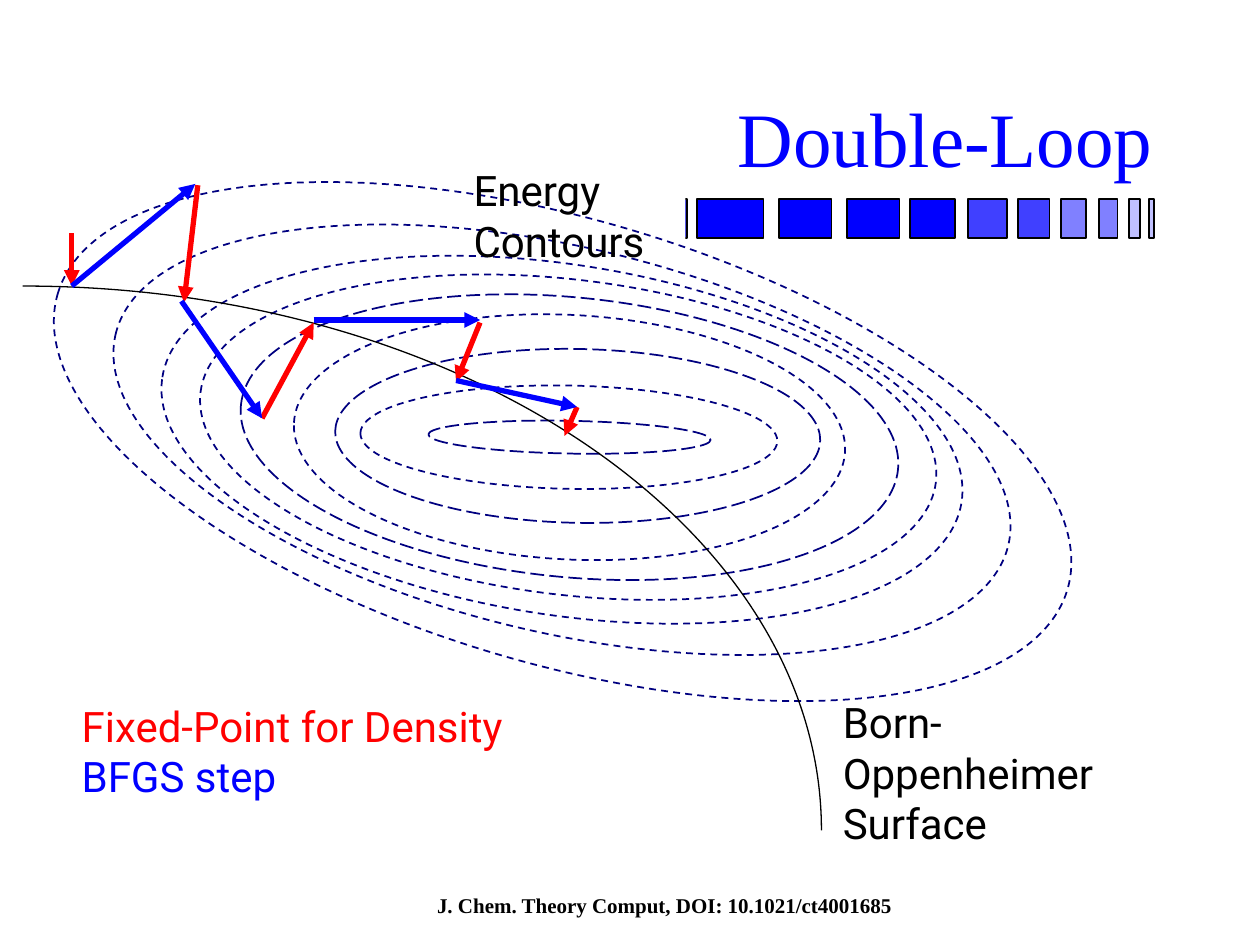
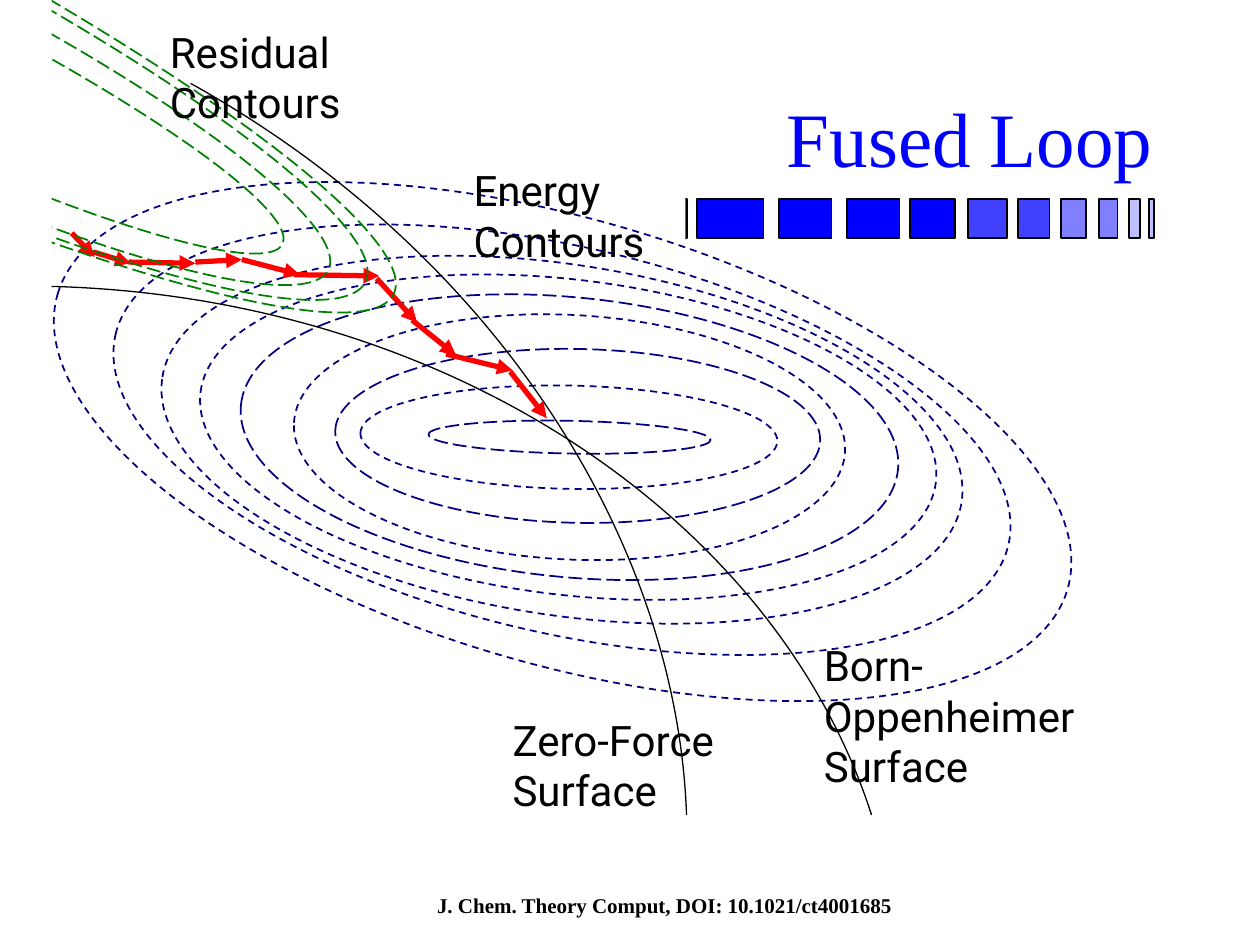
from lxml.etree import SubElement
from pptx import Presentation
from pptx.dml.color import RGBColor
from pptx.enum.dml import MSO_LINE
from pptx.enum.shapes import MSO_CONNECTOR, MSO_SHAPE
from pptx.enum.text import MSO_ANCHOR, MSO_AUTO_SIZE, PP_ALIGN
from pptx.oxml.ns import qn
from pptx.util import Inches, Pt

COLORS = {
    "black": "000000",
    "white": "FFFFFF",
    "blue": "0000FF",
    "blue_dark": "0000E0",
    "blue_mid": "4040FF",
    "blue_light": "8080FF",
    "blue_pale": "C0C0FF",
    "navy": "000080",
    "green": "008000",
    "red": "FF0000",
}
SERIF, SANS = "Times New Roman", "Roboto"
CITATION = "J. Chem. Theory Comput, DOI: 10.1021/ct4001685"
ARC_HANDLE = 0.5523  # Bezier handle of a quarter ellipse, as a share of its radius

# Fading band under the title: left, width, colour
BAND_TOP, BAND_HEIGHT = 1.58, 0.31
BAND_TILES = [
    (9.12, 0.04, "blue_pale"), (8.96, 0.09, "blue_pale"),
    (8.72, 0.15, "blue_light"), (8.42, 0.2, "blue_light"),
    (8.08, 0.25, "blue_mid"), (7.68, 0.31, "blue_mid"),
    (6.18, 0.42, "blue"), (7.22, 0.36, "blue"), (6.72, 0.42, "blue"),
    (5.53, 0.53, "blue"), (4.86, 0.59, "blue_dark"), (0.01, 4.77, "blue_dark"),
]

# Contours: left, top, width, height, rotation, dash
SHORT, LONG = MSO_LINE.DASH, MSO_LINE.LONG_DASH
ENERGY_CONTOURS = [
    (0.82, 1.96, 7.28, 3.06, 13.3, SHORT),
    (2.86, 3.06, 3.31, 0.82, 1.1, SHORT),
    (3.4, 3.34, 2.24, 0.26, 1.1, LONG),
    (2.66, 2.77, 3.85, 1.38, 1.1, LONG),
    (2.33, 2.5, 4.38, 1.94, 3, SHORT),
    (1.9, 2.36, 5.24, 2.22, 5.6, LONG),
    (1.57, 2.22, 5.88, 2.5, 7, SHORT),
    (1.25, 2.1, 6.42, 2.78, 8.9, SHORT),
    (0.29, 1.74, 8.35, 3.53, 16.3, SHORT),
]
RESIDUAL_CONTOURS = [
    (-4.85, -0.26, 7.47, 1.12, 26, LONG),
    (-5.52, -0.5, 8.56, 1.53, 26, LONG),
    (-7.03, -0.97, 10.46, 1.83, 26, LONG),
    (-8.61, -1.38, 12.36, 2.01, 26, LONG),
]

# Steps: x and y of the start, x and y of the end
DENSITY_STEPS = [
    (0.57, 1.85, 0.57, 2.27), (1.57, 1.47, 1.46, 2.4), (2.08, 3.32, 2.49, 2.56),
    (3.81, 2.56, 3.62, 3.03), (4.58, 3.23, 4.48, 3.46),
]
BFGS_STEPS = [
    (0.57, 2.27, 1.55, 1.46), (1.44, 2.39, 2.08, 3.32),
    (2.49, 2.54, 3.81, 2.54), (3.62, 3.02, 4.58, 3.23),
]
FUSED_STEPS = [
    (0.57, 1.85, 0.75, 2.04), (0.74, 2, 1.04, 2.09), (1.02, 2.08, 1.55, 2.09),
    (1.55, 2.08, 1.92, 2.06), (1.92, 2.06, 2.38, 2.18), (2.33, 2.18, 3.01, 2.19),
    (2.99, 2.21, 3.31, 2.56), (3.27, 2.54, 3.62, 2.82), (3.54, 2.81, 4.07, 2.94),
    (4.05, 2.95, 4.34, 3.32),
]


def rgb(name):
    return RGBColor.from_string(COLORS[name])


def set_line(shape, color, width):
    shape.line.color.rgb = rgb(color)
    shape.line.width = Pt(width)


def add_block(shapes, x, y, w, h, fill, outline=None):
    sp = shapes.add_shape(MSO_SHAPE.RECTANGLE, Inches(x), Inches(y), Inches(w), Inches(h))
    sp.shadow.inherit = False
    sp.fill.solid()
    sp.fill.fore_color.rgb = rgb(fill)
    if outline:
        set_line(sp, outline, 1)
    else:
        sp.line.fill.background()
    return sp


def add_steps(s, steps, color):
    for x1, y1, x2, y2 in steps:
        cx = s.shapes.add_connector(
            MSO_CONNECTOR.STRAIGHT, Inches(x1), Inches(y1), Inches(x2), Inches(y2))
        set_line(cx, color, 3)
        sp_pr = cx.element.find(qn("p:spPr"))
        SubElement(sp_pr.find(qn("a:ln")), qn("a:tailEnd"), type="triangle")
        SubElement(sp_pr, qn("a:effectLst"))


def add_contours(s, contours, color):
    for x, y, w, h, angle, dash in contours:
        sp = s.shapes.add_shape(MSO_SHAPE.OVAL, Inches(x), Inches(y), Inches(w), Inches(h))
        sp.shadow.inherit = False
        sp.rotation = angle
        sp.fill.background()
        set_line(sp, color, 1)
        sp.line.dash_style = dash


def add_surface(s, x, y, w, h, angle=0):
    """Quarter ellipse from the top left to the bottom right of its box."""
    builder = s.shapes.build_freeform(Inches(x), Inches(y))
    builder.add_line_segments([
        (Inches(x + w * ARC_HANDLE), Inches(y)),
        (Inches(x + w), Inches(y + h * (1 - ARC_HANDLE))),
        (Inches(x + w), Inches(y + h)),
    ], close=False)
    sp = builder.convert_to_shape()
    # Turn the three segments into one Bezier curve
    outline = next(sp.element.iter(qn("a:path")))
    curve = SubElement(outline, qn("a:cubicBezTo"))
    for segment in outline.findall(qn("a:lnTo")):
        curve.append(segment[0])
        outline.remove(segment)
    sp.shadow.inherit = False
    sp.rotation = angle
    sp.fill.background()
    set_line(sp, "black", 0.75)


def add_run(p, text, size, font, color, bold=False):
    r = p.add_run()
    r.text = text
    r.font.size = Pt(size)
    r.font.name = font
    r.font.bold = bold
    r.font.color.rgb = rgb(color)


def add_label(s, x, y, w, h, *lines):
    """Each line is a pair of text and colour."""
    tf = s.shapes.add_textbox(Inches(x), Inches(y), Inches(w), Inches(h)).text_frame
    tf.word_wrap = True
    tf.auto_size = MSO_AUTO_SIZE.SHAPE_TO_FIT_TEXT
    for i, (text, color) in enumerate(lines):
        p = tf.add_paragraph() if i else tf.paragraphs[0]
        add_run(p, text, 24, SANS, color)


def add_title(s, text):
    title = s.shapes.title
    title.left, title.top = Inches(0.75), Inches(0.21)
    title.width, title.height = Inches(8.5), Inches(1.29)
    tf = title.text_frame
    tf.auto_size = MSO_AUTO_SIZE.NONE
    tf.vertical_anchor = MSO_ANCHOR.BOTTOM
    p = tf.paragraphs[0]
    p.alignment = PP_ALIGN.RIGHT
    add_run(p, text, 44, SERIF, "blue")
    s.shapes.element.append(title.element)  # bring to front


def move_band_to_layout(s):
    """Build the band on a fresh slide, then hand it to the slide's layout."""
    layout = s.slide_layout
    for ph in list(layout.placeholders):
        if ph.placeholder_format.idx:
            layout.shapes.element.remove(ph.element)
    band = s.shapes.add_group_shape()
    for x, w, color in BAND_TILES:
        add_block(band.shapes, x, BAND_TOP, w, BAND_HEIGHT, color, "black")
    cover = add_block(s.shapes, 0, 0, 5.44, 1.95, "white")
    for part in (band, cover):
        layout.shapes.element.append(part.element)


def add_citation(s):
    tf = s.shapes.add_textbox(Inches(2.99), Inches(6.98), Inches(4.57), Inches(0.4)).text_frame
    tf.word_wrap = True
    tf.vertical_anchor = MSO_ANCHOR.MIDDLE
    p = tf.paragraphs[0]
    p.alignment = PP_ALIGN.CENTER
    add_run(p, CITATION, 12, SERIF, "black", bold=True)


def finish_slide(s, title):
    add_label(s, 3.66, 1.26, 2.49, 0.4, ("Energy Contours", "black"))
    add_title(s, title)
    add_citation(s)


def double_loop(s):
    add_contours(s, ENERGY_CONTOURS, "navy")
    add_surface(s, 0.18, 2.27, 6.34, 4.32)
    add_steps(s, DENSITY_STEPS, "red")
    add_steps(s, BFGS_STEPS, "blue")
    add_label(s, 6.59, 5.48, 2.49, 0.7, ("Born-Oppenheimer Surface", "black"))
    add_label(s, 0.55, 5.51, 4.3, 0.91,
              ("Fixed-Point for Density", "red"), ("BFGS step", "blue"))
    finish_slide(s, "Double-Loop")


def fused_loop(s):
    add_contours(s, ENERGY_CONTOURS, "navy")
    add_surface(s, 0.18, 2.27, 6.96, 5.61)
    add_surface(s, -0.29, 2, 6.96, 5.61, 29.1)
    add_steps(s, FUSED_STEPS, "red")
    add_contours(s, RESIDUAL_CONTOURS, "green")
    # White margins that trim the curves
    add_block(s.shapes, 4.48, 6.47, 3.73, 1.03, "white")
    add_block(s.shapes, 0, 0, 0.41, 3.23, "white")
    add_label(s, 6.44, 5.03, 2.49, 0.7, ("Born-Oppenheimer Surface", "black"))
    add_label(s, 3.97, 5.62, 1.83, 0.7, ("Zero-Force Surface", "black"))
    add_label(s, 1.25, 0.16, 2.49, 0.4, ("Residual Contours", "black"))
    finish_slide(s, "Fused Loop")


def main():
    prs = Presentation()
    prs.slide_width, prs.slide_height = Inches(10), Inches(7.5)
    layout = prs.slide_layouts[5]
    first, second = (prs.slides.add_slide(layout) for _ in range(2))
    move_band_to_layout(first)
    double_loop(first)
    fused_loop(second)
    prs.save("out.pptx")


if __name__ == "__main__":
    main()
